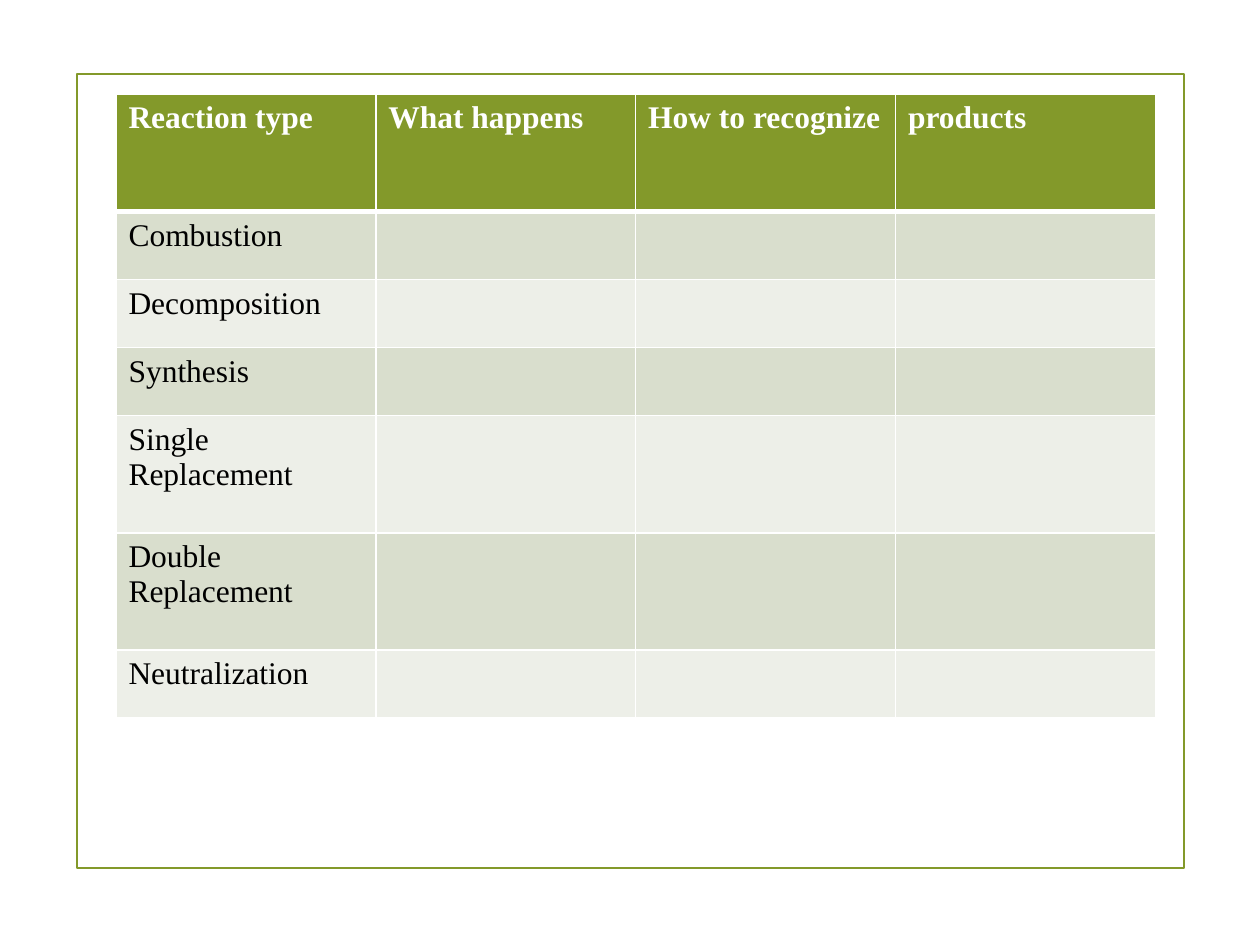
"""Build a slide with a worksheet table of chemical reaction types."""
from lxml import etree
from pptx import Presentation
from pptx import util as u
from pptx.dml.color import RGBColor
from pptx.enum import shapes
from pptx.oxml.ns import qn

COLORS = {
    "green": "83992A",
    "dark_band": "D9DECD",
    "light_band": "EDEFE8",
    "white": "FFFFFF",
    "black": "000000",
}
FONT = "Times New Roman"
HEADINGS = ["Reaction type", "What happens", "How to recognize", "products"]
REACTIONS = ["Combustion", "Decomposition", "Synthesis",
             "Single Replacement", "Double Replacement", "Neutralization"]
TABLE_WIDTH = 8.25
TALL, SHORT = 0.93, 0.54
ROW_HEIGHTS = [TALL, SHORT, SHORT, SHORT, TALL, TALL, SHORT]


def color(name):
    """Return the named palette color."""
    return RGBColor.from_string(COLORS[name])


def add_frame(slide):
    """Draw the thin green frame around the content."""
    frame = slide.shapes.add_shape(
        shapes.MSO_SHAPE.RECTANGLE,
        u.Inches(0.61), u.Inches(0.59), u.Inches(8.79), u.Inches(6.3))
    frame.shadow.inherit = False
    frame.fill.background()
    frame.line.color.rgb = color("green")
    frame.line.width = u.Pt(1.25)


def set_borders(cell, top, bottom):
    """Give a cell white borders with the top and bottom widths in points."""
    properties = cell._tc.get_or_add_tcPr()
    for side, width in (("L", 1), ("R", 1), ("T", top), ("B", bottom)):
        line = etree.SubElement(properties, qn(f"a:ln{side}"), w=str(u.Pt(width)))
        fill = etree.SubElement(line, qn("a:solidFill"))
        etree.SubElement(fill, qn("a:srgbClr"), val=COLORS["white"])


def fill_cell(cell, label, fill, font_color, bold):
    """Fill a cell and write its label, if it has one."""
    cell.fill.solid()
    cell.fill.fore_color.rgb = color(fill)
    if label:
        run = cell.text_frame.paragraphs[0].add_run()
        run.text = label
        run.font.name = FONT
        run.font.size = u.Pt(18)
        run.font.bold = bold
        run.font.color.rgb = color(font_color)


def add_reaction_table(slide):
    """Add the table with a green heading row and banded reaction rows."""
    rows = [HEADINGS] + [[name, "", "", ""] for name in REACTIONS]
    table = slide.shapes.add_table(
        len(rows), len(HEADINGS), u.Inches(0.92), u.Inches(0.75),
        u.Inches(TABLE_WIDTH), u.Inches(sum(ROW_HEIGHTS))).table
    for column in table.columns:
        column.width = u.Inches(TABLE_WIDTH / len(HEADINGS))
    for index, labels in enumerate(rows):
        table.rows[index].height = u.Inches(ROW_HEIGHTS[index])
        heading = index == 0
        band = "dark_band" if index % 2 else "light_band"
        for column_index, label in enumerate(labels):
            cell = table.cell(index, column_index)
            set_borders(cell, top=3 if index == 1 else 1, bottom=3 if heading else 1)
            fill_cell(cell, label, "green" if heading else band,
                      "white" if heading else "black", heading)


def main():
    """Create the presentation and save it."""
    presentation = Presentation()
    presentation.slide_width = u.Inches(10)
    presentation.slide_height = u.Inches(7.5)
    slide = presentation.slides.add_slide(presentation.slide_layouts[6])
    add_frame(slide)
    add_reaction_table(slide)
    presentation.save("out.pptx")


if __name__ == "__main__":
    main()
